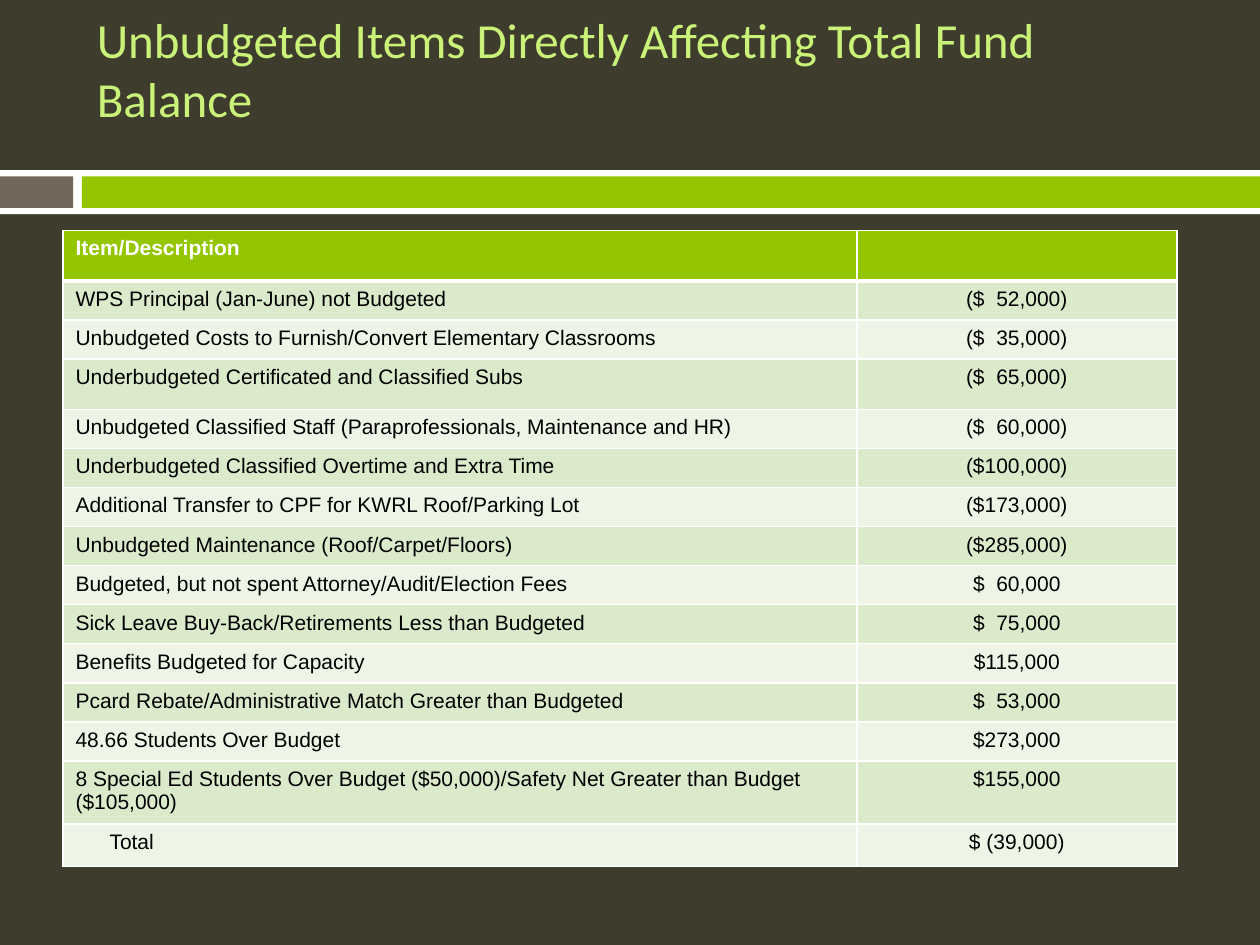
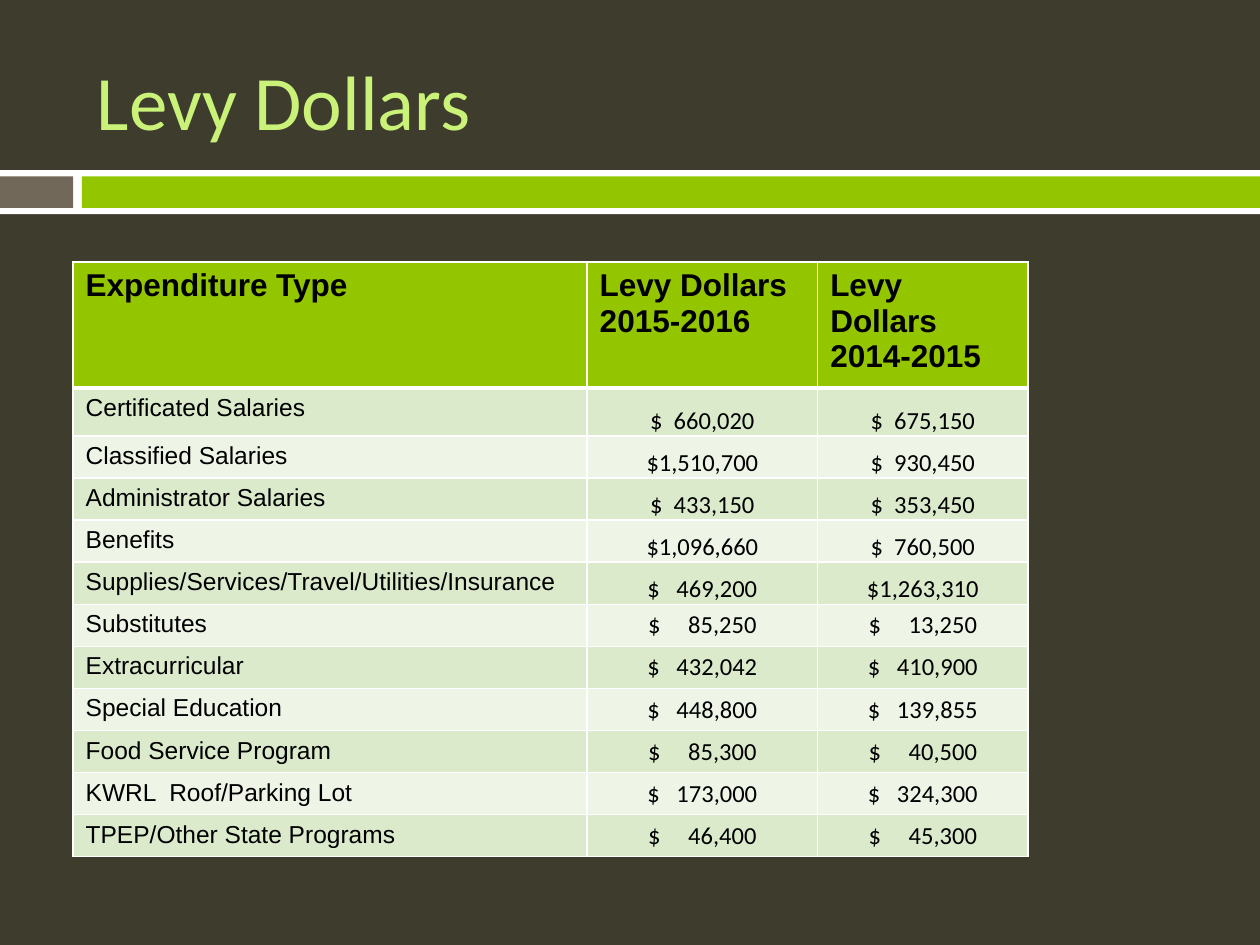
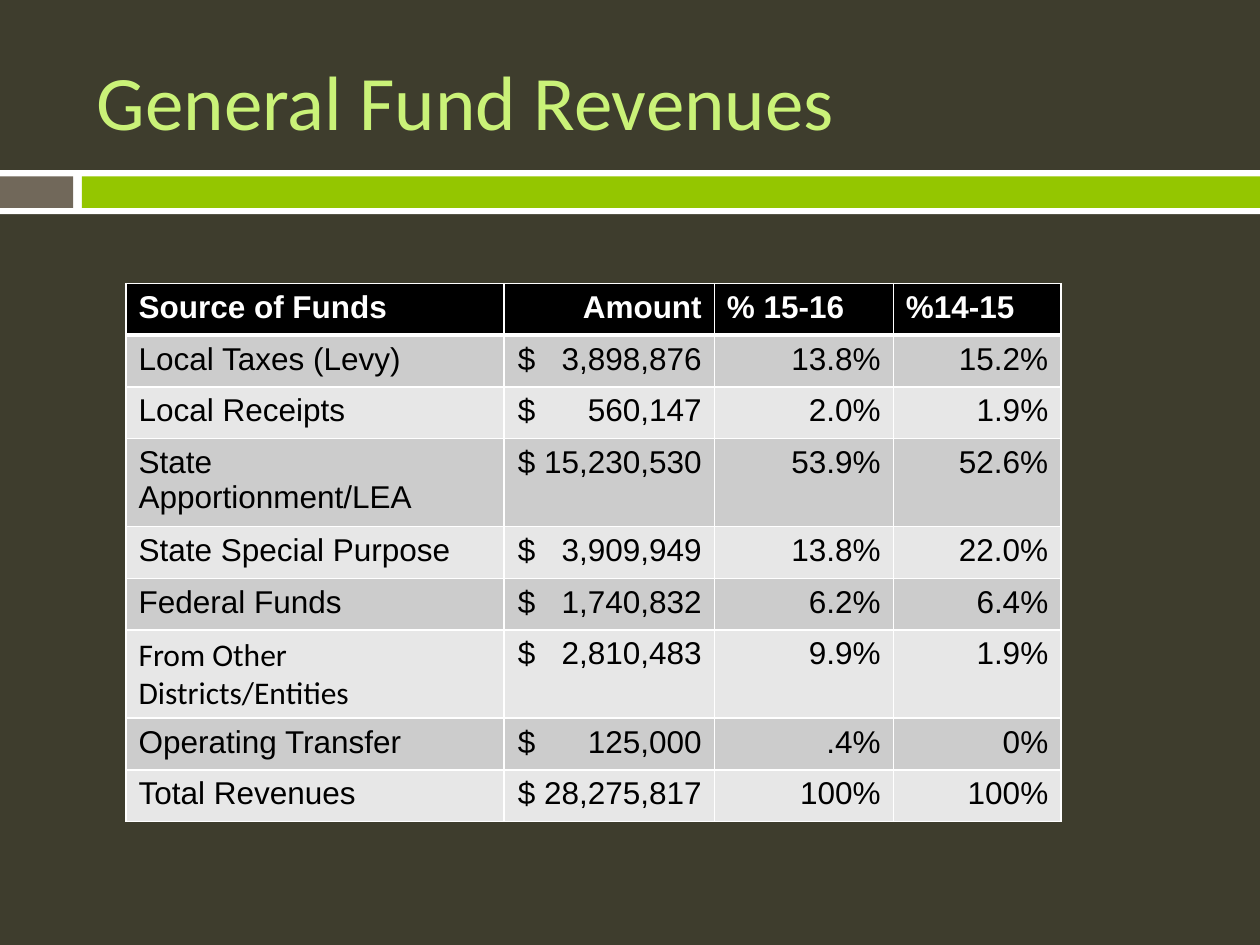
import dataclasses

import pptx
import pptx.dml.color
import pptx.enum.shapes
import pptx.enum.text
import pptx.oxml
import pptx.oxml.ns
import pptx.util

Inches = pptx.util.Inches
Pt = pptx.util.Pt
ALIGN = pptx.enum.text.PP_ALIGN
ANCHOR = pptx.enum.text.MSO_ANCHOR


@dataclasses.dataclass(frozen=True)
class Theme:
    """Colours, fonts and type sizes of the deck."""
    ground: str = "3E3D2D"
    white: str = "FFFFFF"
    black: str = "000000"
    stone: str = "71685A"
    lime: str = "94C600"
    title: str = "CAF278"
    greens: tuple = ("DCEACC", "EEF5E7")
    greys: tuple = ("CCCCCC", "E7E7E7")
    sans: str = "Arial"
    soft: str = "Calibri"
    large: int = 44
    medium: int = 28
    body: int = 18
    small: int = 14
    tiny: int = 12
    thin: int = 1
    thick: int = 3


THEME = Theme()


@dataclasses.dataclass(frozen=True)
class Look:
    """Head and body style of one table."""
    fill: str
    ink: str
    bands: tuple
    head: int
    body: int


@dataclasses.dataclass(frozen=True)
class Column:
    """Width, alignment and font of one table column."""
    width: float
    align: int = ALIGN.LEFT
    top: int = ALIGN.LEFT
    font: str = THEME.sans


ITEMS = [
    ("Item/Description", ""),
    ("WPS Principal (Jan-June) not Budgeted", "($  52,000)"),
    ("Unbudgeted Costs to Furnish/Convert Elementary Classrooms", "($  35,000)"),
    ("Underbudgeted Certificated and Classified Subs", "($  65,000)"),
    ("Unbudgeted Classified Staff (Paraprofessionals, Maintenance and HR)", "($  60,000)"),
    ("Underbudgeted Classified Overtime and Extra Time", "($100,000)"),
    ("Additional Transfer to CPF for KWRL Roof/Parking Lot", "($173,000)"),
    ("Unbudgeted Maintenance (Roof/Carpet/Floors)", "($285,000)"),
    ("Budgeted, but not spent Attorney/Audit/Election Fees", "$  60,000"),
    ("Sick Leave Buy-Back/Retirements Less than Budgeted", "$  75,000"),
    ("Benefits Budgeted for Capacity", "$115,000"),
    ("Pcard Rebate/Administrative Match Greater than Budgeted", "$  53,000"),
    ("48.66 Students Over Budget", "$273,000"),
    ("8 Special Ed Students Over Budget ($50,000)/Safety Net Greater than Budget ($105,000)",
     "$155,000"),
    ("Total", "$ (39,000)"),
]

LEVY = [
    ("Expenditure Type", "Levy Dollars\n2015-2016", "Levy Dollars\n2014-2015"),
    ("Certificated Salaries", "$  660,020", "$  675,150"),
    ("Classified Salaries", "$1,510,700", "$  930,450"),
    ("Administrator Salaries", "$  433,150", "$  353,450"),
    ("Benefits", "$1,096,660", "$  760,500"),
    ("Supplies/Services/Travel/Utilities/Insurance", "$   469,200", "$1,263,310"),
    ("Substitutes", "$     85,250", "$     13,250"),
    ("Extracurricular", "$   432,042", "$   410,900"),
    ("Special Education", "$   448,800", "$   139,855"),
    ("Food Service Program", "$     85,300", "$     40,500"),
    ("KWRL  Roof/Parking Lot", "$   173,000", "$   324,300"),
    ("TPEP/Other State Programs", "$     46,400", "$     45,300"),
]

FUNDS = [
    ("Source of Funds", "Amount", "% 15-16", "%14-15"),
    ("Local Taxes (Levy)", "$   3,898,876", "13.8%", "15.2%"),
    ("Local Receipts", "$      560,147", "2.0%", "1.9%"),
    ("State Apportionment/LEA", "$ 15,230,530", "53.9%", "52.6%"),
    ("State Special Purpose", "$   3,909,949", "13.8%", "22.0%"),
    ("Federal Funds", "$   1,740,832", "6.2%", "6.4%"),
    ("From Other Districts/Entities", "$   2,810,483", "9.9%", "1.9%"),
    ("Operating Transfer", "$      125,000", ".4%", "0%"),
    ("Total Revenues", "$ 28,275,817", "100%", "100%"),
]


def paint(fill, tint):
    """Fill with one solid colour."""
    fill.solid()
    fill.fore_color.rgb = pptx.dml.color.RGBColor.from_string(tint)


def write(frame, text, size, tint, font=THEME.sans, bold=False, align=ALIGN.LEFT):
    """Add each line of text as a paragraph with one styled run."""
    for n, line in enumerate(text.split("\n")):
        para = frame.add_paragraph() if n else frame.paragraphs[0]
        para.alignment = align
        run = para.add_run()
        run.text = line
        run.font.name = font
        run.font.size = Pt(size)
        run.font.bold = bold
        run.font.color.rgb = pptx.dml.color.RGBColor.from_string(tint)


def band(slide, left, top, width, height, tint):
    """Draw one flat bar."""
    bar = slide.shapes.add_shape(
        pptx.enum.shapes.MSO_SHAPE.RECTANGLE,
        Inches(left), Inches(top), Inches(width), Inches(height))
    bar.shadow.inherit = False
    bar.line.fill.background()
    paint(bar.fill, tint)


def page(deck, title, size, height):
    """Add a slide with ground, bands and title."""
    slide = deck.slides.add_slide(deck.slide_layouts[6])
    paint(slide.background.fill, THEME.ground)
    band(slide, 0, 1.35, 10, 0.35, THEME.white)
    band(slide, 0, 1.4, 0.58, 0.25, THEME.stone)
    band(slide, 0.65, 1.4, 9.35, 0.25, THEME.lime)
    box = slide.shapes.add_textbox(Inches(0.67), Inches(0.25), Inches(8.92), Inches(height))
    box.text_frame.word_wrap = True
    box.text_frame.vertical_anchor = ANCHOR.MIDDLE
    write(box.text_frame, title, size, THEME.title, THEME.soft)
    return slide


def edge(cell, row):
    """Rule a cell in white, with a thick line under the head."""
    props = cell._tc.get_or_add_tcPr()
    widths = {"L": THEME.thin, "R": THEME.thin,
              "T": THEME.thick if row == 1 else THEME.thin,
              "B": THEME.thick if row == 0 else THEME.thin}
    for side, width in widths.items():
        props.append(pptx.oxml.parse_xml(
            f'<a:ln{side} {pptx.oxml.ns.nsdecls("a")} w="{Pt(width)}"><a:solidFill>'
            f'<a:srgbClr val="{THEME.white}"/></a:solidFill></a:ln{side}>'))


def grid(slide, left, top, cols, heights, rows, look):
    """Build a banded table and return it."""
    width = sum(col.width for col in cols)
    table = slide.shapes.add_table(
        len(rows), len(cols), Inches(left), Inches(top),
        Inches(width), Inches(sum(heights))).table
    for n, col in enumerate(cols):
        table.columns[n].width = Inches(col.width)
    for r, texts in enumerate(rows):
        table.rows[r].height = Inches(heights[r])
        for c, (col, text) in enumerate(zip(cols, texts)):
            cell = table.cell(r, c)
            edge(cell, r)
            if r == 0:
                paint(cell.fill, look.fill)
                write(cell.text_frame, text, look.head, look.ink, bold=True, align=col.top)
            else:
                paint(cell.fill, look.bands[(r - 1) % 2])
                write(cell.text_frame, text, look.body, THEME.black, col.font, align=col.align)
    return table


def items(deck):
    """Add the slide of unbudgeted items."""
    slide = page(deck, "Unbudgeted Items Directly Affecting Total Fund Balance",
                 THEME.medium, 0.58)
    look = Look(THEME.lime, THEME.white, THEME.greens, THEME.tiny, THEME.tiny)
    cols = [Column(6.3), Column(2.54, ALIGN.CENTER)]
    heights = [0.38, 0.31, 0.31, 0.4] + [0.31] * 10 + [0.34]
    table = grid(slide, 0.5, 1.83, cols, heights, ITEMS, look)
    table.cell(len(ITEMS) - 1, 0).margin_left = Inches(0.37)


def levy(deck):
    """Add the slide of levy dollars."""
    slide = page(deck, "Levy Dollars", THEME.large, 1.08)
    look = Look(THEME.lime, THEME.black, THEME.greens, THEME.body, THEME.small)
    cols = [Column(4.08)] + [Column(width, ALIGN.CENTER, font=THEME.soft)
                             for width in (1.83, 1.67)]
    heights = [0.6, 0.38] + [0.33] * 10
    table = grid(slide, 0.58, 2.08, cols, heights, LEVY, look)
    for r in range(1, 6):
        for c in (1, 2):
            cell = table.cell(r, c)
            cell.vertical_anchor = ANCHOR.BOTTOM
            cell.margin_left = cell.margin_right = cell.margin_top = Inches(0.01)
            cell.margin_bottom = 0


def funds(deck):
    """Add the slide of fund revenues."""
    slide = page(deck, "General Fund Revenues", THEME.large, 1.08)
    look = Look(THEME.black, THEME.white, THEME.greys, THEME.body, THEME.body)
    cols = [Column(3), Column(1.67, ALIGN.RIGHT, ALIGN.RIGHT),
            Column(1.42, ALIGN.RIGHT), Column(1.33, ALIGN.RIGHT)]
    table = grid(slide, 1, 2.25, cols, [0.41] * len(FUNDS), FUNDS, look)
    table.cell(6, 0).text_frame.paragraphs[0].runs[0].font.name = THEME.soft


def main():
    """Build and save the deck."""
    deck = pptx.Presentation()
    deck.slide_width = Inches(10)
    deck.slide_height = Inches(7.5)
    items(deck)
    levy(deck)
    funds(deck)
    deck.save("out.pptx")


if __name__ == "__main__":
    main()
